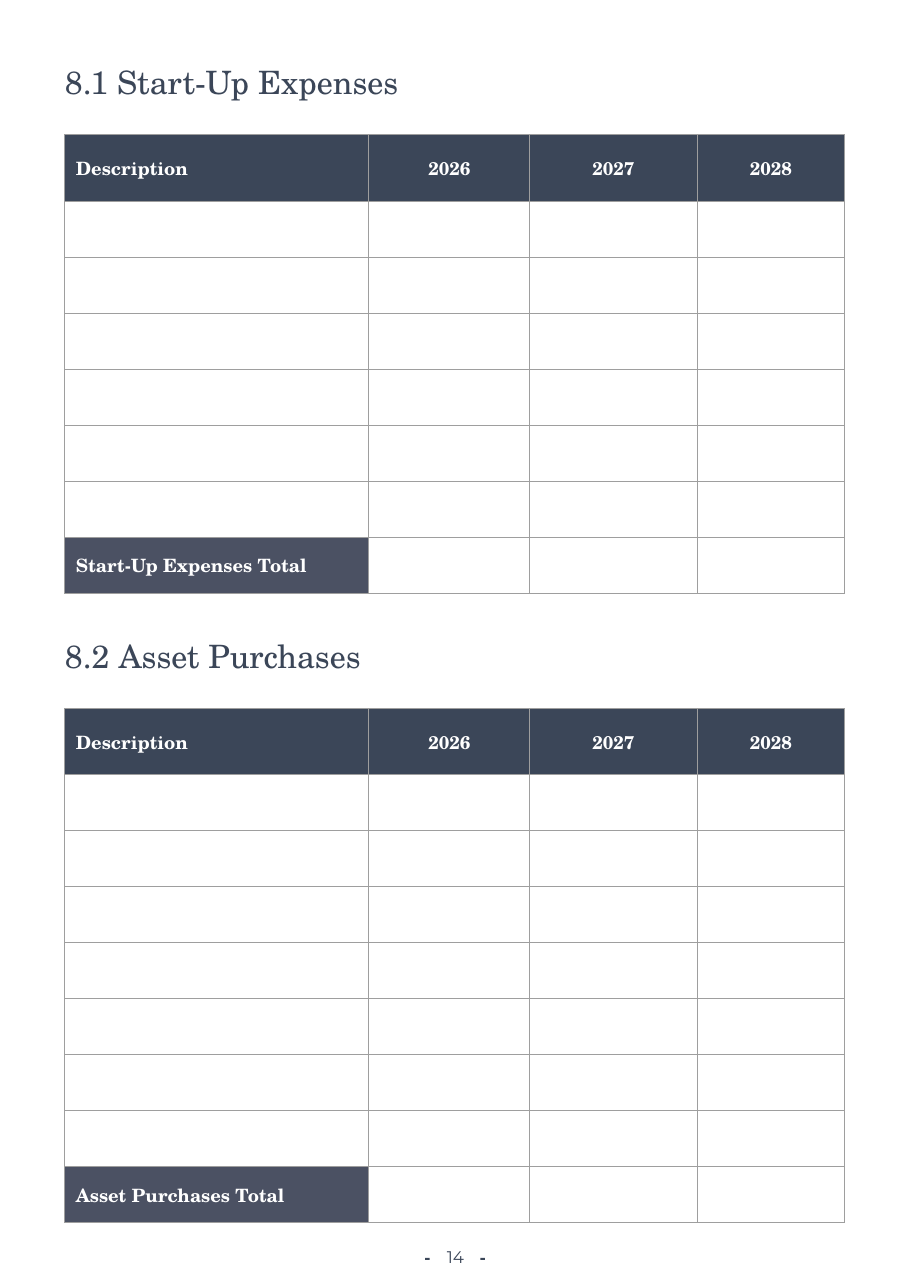
from dataclasses import dataclass

from lxml import etree
from pptx import Presentation
from pptx.dml.color import RGBColor
from pptx.enum.shapes import MSO_SHAPE
from pptx.enum.text import MSO_ANCHOR, MSO_AUTO_SIZE, PP_ALIGN
from pptx.oxml.ns import qn
from pptx.util import Emu, Inches, Pt

RECTANGLE = MSO_SHAPE.RECTANGLE
TOP, MIDDLE = MSO_ANCHOR.TOP, MSO_ANCHOR.MIDDLE
LEFT, CENTER = PP_ALIGN.LEFT, PP_ALIGN.CENTER
NO_FIT = MSO_AUTO_SIZE.NONE

COLORS = {
    "ink": "3B4658",
    "total": "4B5163",
    "border": "9E9E9E",
    "white": "FFFFFF",
}
SERIF = "TeX Gyre Schola"
SANS = "Montserrat"

PAGE_WIDTH = Inches(8.27)
PAGE_HEIGHT = Inches(11.69)
MARGIN = 7.13
HEADING_HEIGHT = 3
HEADING_TO_TABLE = 5.6
COLUMN_SHARES = (33.37, 17.65, 18.38, 16.2)
HEADER_ROW = 5.13
BODY_ROW = 4.35
TABLE_WIDTH = sum(COLUMN_SHARES)
HEADERS = ("Description", "2026", "2027", "2028")
BORDER_SIDES = ("a:lnL", "a:lnR", "a:lnT", "a:lnB")


@dataclass(frozen=True)
class Section:
    heading: str
    total: str
    top: float
    blank_rows: int


SECTIONS = (
    Section("8.1 Start-Up Expenses", "Start-Up Expenses Total", 4.88, 6),
    Section("8.2 Asset Purchases", "Asset Purchases Total", 49.44, 7),
)


def across(percent: float) -> Emu:
    return Emu(round(PAGE_WIDTH * percent / 100))


def down(percent: float) -> Emu:
    return Emu(round(PAGE_HEIGHT * percent / 100))


def color(name: str) -> RGBColor:
    return RGBColor.from_string(COLORS[name])


def place(shape, left: float, top: float, width: float, height: float) -> None:
    shape.left, shape.top = across(left), down(top)
    shape.width, shape.height = across(width), down(height)


def write(frame, text: str, font: str, size: float, ink: str,
          bold: bool = False, align=LEFT) -> None:
    frame.text = text
    para = frame.paragraphs[0]
    para.alignment = align
    para.space_before = Pt(0)
    for span in para.runs:
        span.font.name = font
        span.font.size = Pt(size)
        span.font.bold = bold
        span.font.color.rgb = color(ink)


def clear_frame(frame) -> None:
    frame.margin_left = frame.margin_right = 0
    frame.margin_top = frame.margin_bottom = 0
    frame.vertical_anchor = TOP
    frame.word_wrap = True
    frame.auto_size = NO_FIT


def add_borders(cell) -> None:
    properties = cell._tc.get_or_add_tcPr()
    for side in BORDER_SIDES:
        line = etree.SubElement(properties, qn(side), w=str(Pt(0.75)))
        fill = etree.SubElement(line, qn("a:solidFill"))
        etree.SubElement(fill, qn("a:srgbClr"), val=COLORS["border"])


def fill_cell(cell, text: str, fill: str, align=LEFT) -> None:
    cell.fill.solid()
    cell.fill.fore_color.rgb = color(fill)
    write(cell.text_frame, text, SERIF, 12, "white", True, align)


def add_section(page, placeholder, section: Section) -> None:
    place(placeholder, MARGIN, section.top, TABLE_WIDTH, HEADING_HEIGHT)
    clear_frame(placeholder.text_frame)
    write(placeholder.text_frame, section.heading, SERIF, 21, "ink")

    rows = (HEADER_ROW,) + (BODY_ROW,) * (section.blank_rows + 1)
    table = page.shapes.add_table(
        len(rows), len(COLUMN_SHARES), across(MARGIN),
        down(section.top + HEADING_TO_TABLE),
        across(TABLE_WIDTH), down(sum(rows))).table
    table.first_row = table.horz_banding = False
    for column, share in zip(table.columns, COLUMN_SHARES):
        column.width = across(share)
    for row, share in zip(table.rows, rows):
        row.height = down(share)
    for cell in table.iter_cells():
        cell.margin_left = cell.margin_right = Inches(0.1)
        cell.margin_top = cell.margin_bottom = Inches(0.1)
        cell.vertical_anchor = MIDDLE
        add_borders(cell)
        cell.fill.background()
    for index, header in enumerate(HEADERS):
        fill_cell(table.cell(0, index), header, "ink", CENTER if index else LEFT)
    fill_cell(table.cell(len(rows) - 1, 0), section.total, "total")


def add_page_number(page, number: str) -> None:
    group = page.shapes.add_group_shape()
    box = group.shapes.add_textbox(0, 0, 0, 0)
    place(box, 47.88, 96.83, 4.24, 1.63)
    clear_frame(box.text_frame)
    write(box.text_frame, number, SANS, 11, "ink", align=CENTER)
    for left in (46.67, 52.72):
        dash = group.shapes.add_shape(RECTANGLE, 0, 0, 0, 0)
        place(dash, left, 97.66, 0.5, 0.17)
        dash.shadow.inherit = False
        dash.fill.solid()
        dash.fill.fore_color.rgb = color("ink")
        dash.line.fill.background()


def main() -> None:
    deck = Presentation()
    deck.slide_width, deck.slide_height = PAGE_WIDTH, PAGE_HEIGHT
    page = deck.slides.add_slide(deck.slide_layouts[0])
    page.background.fill.solid()
    page.background.fill.fore_color.rgb = color("white")
    for placeholder, section in zip(list(page.placeholders), SECTIONS):
        add_section(page, placeholder, section)
    add_page_number(page, "14")
    deck.save("out.pptx")


if __name__ == "__main__":
    main()
